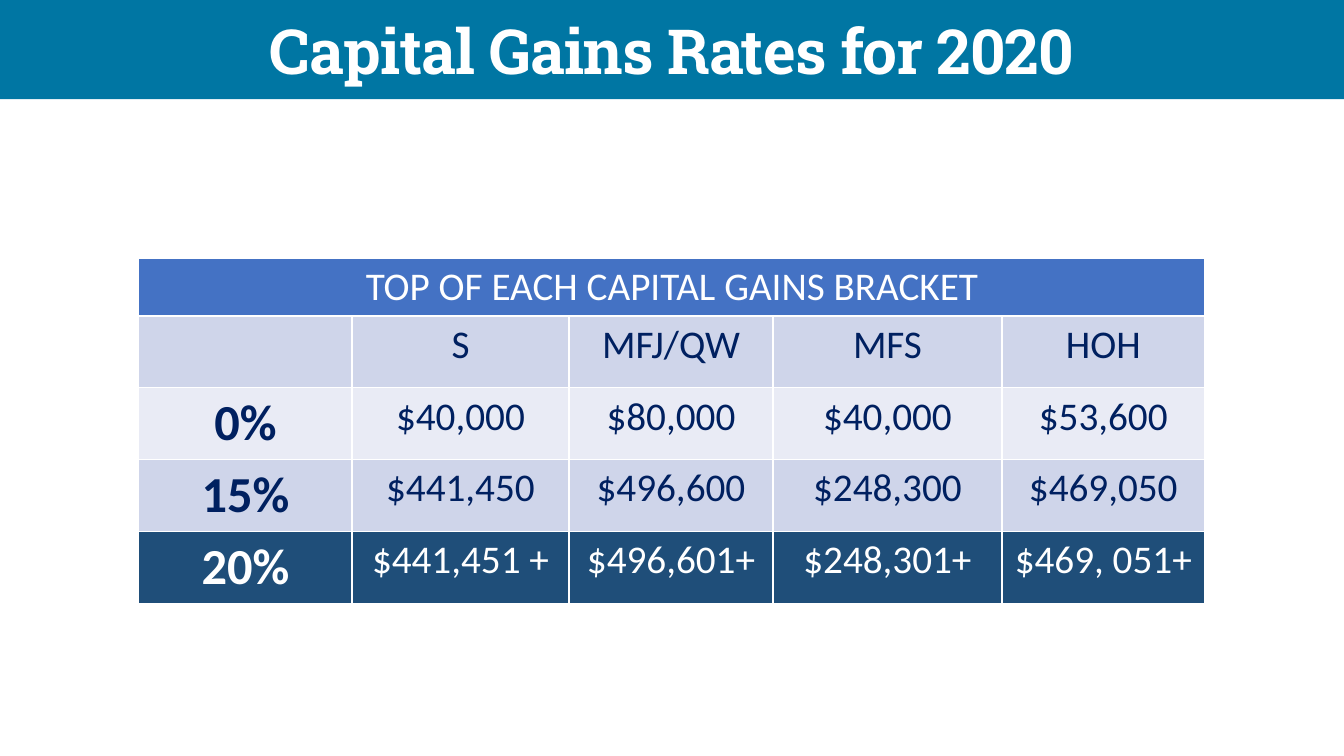
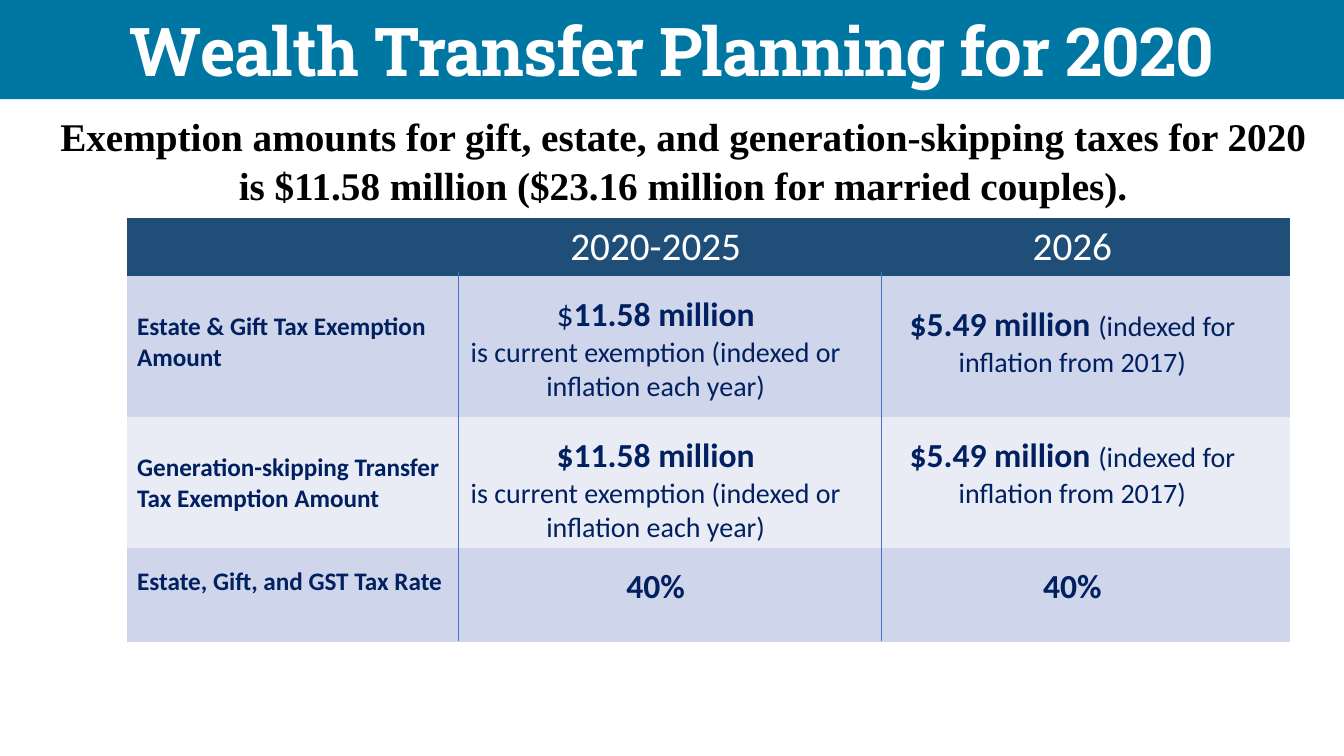
from lxml import etree
from pptx import Presentation
from pptx import util as u
from pptx.dml.color import RGBColor
from pptx.enum import shapes, text
from pptx.oxml.ns import qn

TEAL, NAVY, DEEP_BLUE, BLUE = "0076A3", "002060", "1F4E79", "4472C4"
BAND_DARK, BAND_LIGHT, WHITE, BLACK = "CFD5EA", "E9EBF5", "FFFFFF", "000000"
PAGE_WIDTH, PAGE_HEIGHT = u.Cm(33.87), u.Cm(19.05)
PLAIN_TABLE = "{2D5ABB26-0587-4C30-8999-92F81FD0307C}"
CENTER, LEFT = text.PP_ALIGN.CENTER, text.PP_ALIGN.LEFT


def rgb(value):
    return RGBColor.from_string(value)


def add_span(para, content, size=28, color=NAVY, bold=False, font="Calibri", tracking=0):
    """Add a run; tracking is in hundredths of a point."""
    span = para.add_run()
    span.text = content
    span.font.size = u.Pt(size)
    span.font.bold = bold
    span.font.name = font
    span.font.color.rgb = rgb(color)
    if tracking:
        span.font._element.set("spc", str(tracking))


def write(frame, lines, align=CENTER, line_spacing=None, **style):
    """Fill a frame; each line is a list of (text, format overrides) pairs."""
    for index, spans in enumerate(lines):
        para = frame.add_paragraph() if index else frame.paragraphs[0]
        para.alignment = align
        if line_spacing:
            para.line_spacing = line_spacing
        for content, overrides in spans:
            add_span(para, content, **{**style, **overrides})


def add_page(deck, title, size):
    page = deck.slides.add_slide(deck.slide_layouts[6])
    band = page.shapes.add_shape(shapes.MSO_SHAPE.RECTANGLE, 0, 0, PAGE_WIDTH, u.Cm(2.5))
    band.shadow.inherit = False
    band.fill.solid()
    band.fill.fore_color.rgb = rgb(TEAL)
    band.line.fill.background()
    band.text_frame.word_wrap = True
    band.text_frame.vertical_anchor = text.MSO_ANCHOR.MIDDLE
    write(band.text_frame, [[(title, {})]], size=size, color=WHITE, bold=True,
          font="Roboto Slab", tracking=-60)
    return page


def add_table(page, left, top, widths, heights):
    frame = page.shapes.add_table(len(heights), len(widths), u.Cm(left), u.Cm(top),
                                  u.Cm(sum(widths)), u.Cm(sum(heights)))
    table = frame.table
    table.first_row = table.horz_banding = False
    table._tbl.tblPr.find(qn("a:tableStyleId")).text = PLAIN_TABLE
    for column, width in zip(table.columns, widths):
        column.width = u.Cm(width)
    for row, height in zip(table.rows, heights):
        row.height = u.Cm(height)
    return table


def fill_cell(cell, color):
    cell.fill.solid()
    cell.fill.fore_color.rgb = rgb(color)


def border_cell(cell, color, width):
    """Outline all four sides; call before the cell is filled."""
    properties = cell._tc.get_or_add_tcPr()
    for side in ("a:lnL", "a:lnR", "a:lnT", "a:lnB"):
        line = etree.SubElement(properties, qn(side), w=str(u.Pt(width)))
        fill = etree.SubElement(line, qn("a:solidFill"))
        etree.SubElement(fill, qn("a:srgbClr"), val=color)


def add_divider(page, x, top, bottom):
    line = page.shapes.add_connector(shapes.MSO_CONNECTOR.STRAIGHT,
                                     u.Cm(x), u.Cm(top), u.Cm(x), u.Cm(bottom))
    line.line.color.rgb = rgb(BLUE)
    line.line.width = u.Pt(0.5)
    etree.SubElement(line._element.spPr, qn("a:effectLst"))


def add_capital_gains(deck):
    page = add_page(deck, "Capital Gains Rates for 2020", 44.4)
    rows = [
        (BLUE, WHITE, ["TOP OF EACH CAPITAL GAINS BRACKET", "", "", "", ""]),
        (BAND_DARK, NAVY, ["", "S", "MFJ/QW", "MFS", "HOH"]),
        (BAND_LIGHT, NAVY, ["0%", "$40,000", "$80,000", "$40,000", "$53,600"]),
        (BAND_DARK, NAVY, ["15%", "$441,450", "$496,600", "$248,300", "$469,050"]),
        (DEEP_BLUE, WHITE, ["20%", "$441,451 +", "$496,601+", "$248,301+", "$469, 051+"]),
    ]
    table = add_table(page, 3.5, 6.5, [5.37, 5.47, 5.14, 5.77, 5.11], [1.46] + [1.81] * 4)
    table.cell(0, 0).merge(table.cell(0, 4))
    for r, (fill, color, values) in enumerate(rows):
        for c, value in enumerate(values):
            cell = table.cell(r, c)
            border_cell(cell, WHITE, 1)
            fill_cell(cell, fill)
            if value:
                is_rate = r > 1 and c == 0
                write(cell.text_frame, [[(value, {})]], color=color,
                      size=36 if is_rate else 28, bold=is_rate)


def add_wealth_transfer(deck):
    page = add_page(deck, "Wealth Transfer Planning for 2020", 48.1)
    box = page.shapes.add_textbox(u.Cm(0.58), u.Cm(2.67), u.Cm(33.27), u.Cm(2.7))
    box.text_frame.word_wrap = True
    summary = ["Exemption amounts for gift, estate, and generation-skipping taxes for 2020",
               "is $11.58 million ($23.16 million for married couples)."]
    write(box.text_frame, [[(line, {})] for line in summary], line_spacing=1.04,
          color=BLACK, bold=True, font="Times New Roman")

    amount, note = {"size": 24, "bold": True}, {"size": 20}
    current_note = [("is current exemption (indexed or inflation each year)", note)]
    later = [[("$5.49 million ", amount), ("(indexed for inflation from 2017)", note)]]
    rate = [[("40%", amount)]]
    # Each row: fill, label, then (lines, top margin) per period
    rows = [
        (BAND_DARK, ("Estate & Gift Tax Exemption Amount", 0.9),
         ([[("$", {"size": 24}), ("11.58 million", amount)], current_note], 0.47),
         (later, 0.73)),
        (BAND_LIGHT, ("Generation-skipping Transfer Tax Exemption Amount", 0.9),
         ([[("$11.58 million", amount)], current_note], 0.47),
         (later, 0.47)),
        (BAND_DARK, ("Estate, Gift, and GST Tax Rate", 0.47), (rate, 0.47), (rate, 0.47)),
    ]
    table = add_table(page, 3.2, 5.49, [8.31, 10.03, 10.97], [1.46, 3.56, 3.3, 2.37])
    for c, heading in enumerate(["", "2020-2025", "2026"]):
        cell = table.cell(0, c)
        fill_cell(cell, DEEP_BLUE)
        if heading:
            write(cell.text_frame, [[(heading, {})]], color=WHITE)
    for r, (fill, (label, label_margin), *periods) in enumerate(rows, start=1):
        label_lines = [[(label, {"size": 18, "bold": True})]]
        for c, (lines, margin) in enumerate([(label_lines, label_margin), *periods]):
            cell = table.cell(r, c)
            cell.margin_top, cell.margin_bottom = u.Cm(margin), u.Cm(0.05)
            fill_cell(cell, fill)
            write(cell.text_frame, lines, align=CENTER if c else LEFT)
    for x in (11.56, 22.2):
        add_divider(page, x, 6.86, 16.15)


def main():
    deck = Presentation()
    deck.slide_width, deck.slide_height = PAGE_WIDTH, PAGE_HEIGHT
    add_capital_gains(deck)
    add_wealth_transfer(deck)
    deck.save("out.pptx")


if __name__ == "__main__":
    main()
